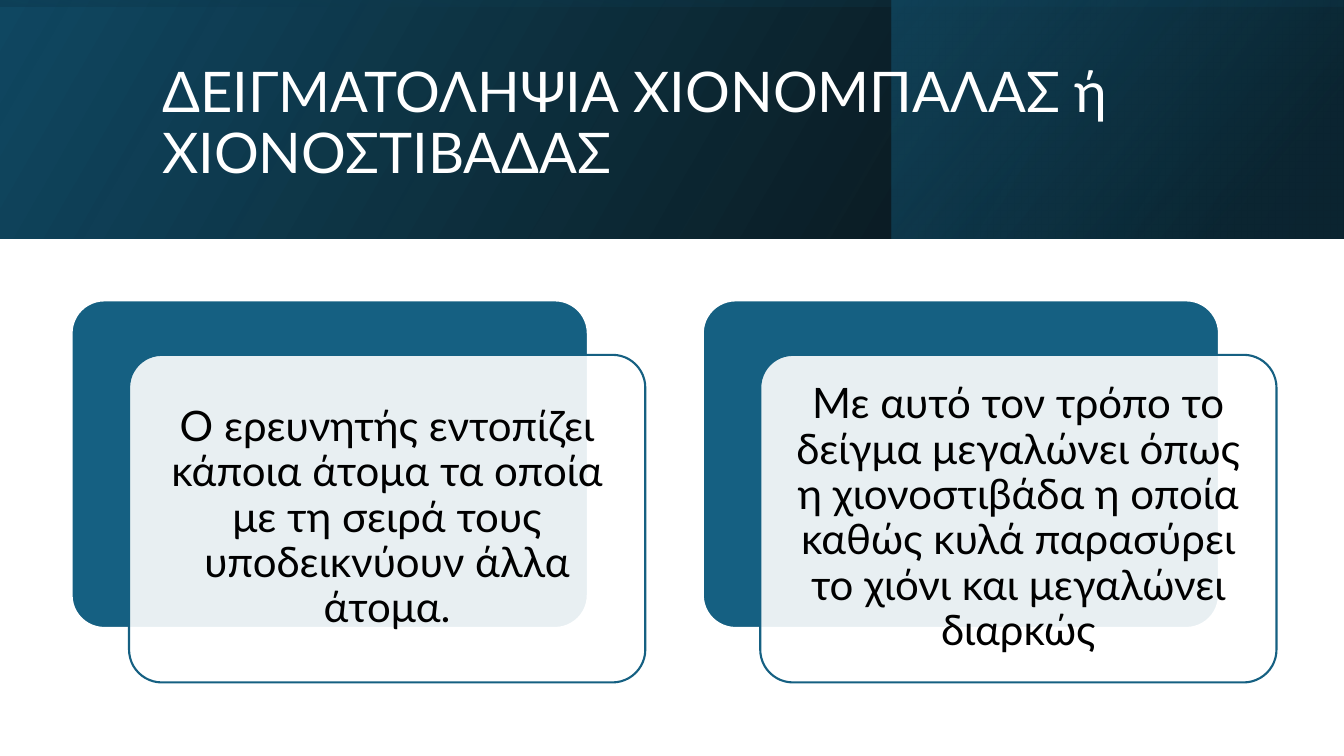
from lxml import etree
from pptx import Presentation, util as u
from pptx.dml.color import RGBColor
from pptx.enum import shapes, text
from pptx.oxml import parse_xml
from pptx.oxml.ns import nsdecls, qn

PX = u.Inches(1) // 100
FONT = "Lato"
COLORS = {"black": "000000", "white": "FFFFFF", "blue": "156082",
          "deep": "104862", "night": "0B3041"}
TITLE = "ΔΕΙΓΜΑΤΟΛΗΨΙΑ ΧΙΟΝΟΜΠΑΛΑΣ ή ΧΙΟΝΟΣΤΙΒΑΔΑΣ"
STEPS = [
    "Ο ερευνητής εντοπίζει κάποια άτομα τα οποία με τη σειρά τους "
    "υποδεικνύουν άλλα άτομα.",
    "Με αυτό τον τρόπο το δείγμα μεγαλώνει όπως η χιονοστιβάδα η οποία "
    "καθώς κυλά παρασύρει το χιόνι και μεγαλώνει διαρκώς",
]


def rgb(name):
    """Return the named colour."""
    return RGBColor.from_string(COLORS[name])


def emu(*lengths):
    """Turn px lengths into EMU."""
    return [length * PX for length in lengths]


def write(frame, wording, size, color, inset_x, inset_y):
    """Fill a text frame with one vertically centred paragraph."""
    frame.word_wrap = True
    frame.vertical_anchor = text.MSO_ANCHOR.MIDDLE
    frame.margin_left = frame.margin_right = inset_x * PX
    frame.margin_top = frame.margin_bottom = inset_y * PX
    paragraph = frame.paragraphs[0]
    paragraph.line_spacing = 0.9
    run = paragraph.add_run()
    run.text = wording
    run.font.name, run.font.size = FONT, u.Pt(size)
    run.font.color.rgb = rgb(color)
    return paragraph


def add_veil(slide, box, stops, angle, rotation=0):
    """Add a mirrored rectangle with a translucent gradient."""
    veil = slide.shapes.add_shape(shapes.MSO_SHAPE.RECTANGLE, *emu(*box))
    veil.shadow.inherit = False
    veil.line.fill.background()
    veil.rotation = rotation
    properties = veil._element.spPr
    properties.find(qn("a:xfrm")).set("flipH", "1")
    marks = "".join(
        f'<a:gs pos="{place * 1000}"><a:srgbClr val="{COLORS[color]}">'
        f'<a:alpha val="{opacity * 1000}"/></a:srgbClr></a:gs>'
        for place, color, opacity in stops)
    properties.find(qn("a:prstGeom")).addnext(parse_xml(
        f'<a:gradFill {nsdecls("a")}><a:gsLst>{marks}</a:gsLst>'
        f'<a:lin ang="{angle * 60000}" scaled="0"/></a:gradFill>'))


def add_banner(slide, left, top, width, height):
    """Add the layered dark banner and its title."""
    add_veil(slide, (left, top, width, height),
             [(0, "black", 96), (100, "deep", 100)], 330)
    add_veil(slide, (left + 884, top, 448, height),
             [(19, "night", 68), (100, "blue", 48)], 320)
    shift = (width - height) // 2
    add_veil(slide, (left + shift, top - shift, height, width),
             [(23, "deep", 16), (99, "black", 45)], 350, 270)
    title = slide.shapes.add_textbox(*emu(left + 151, top + 38, 1063, 172))
    write(title.text_frame, TITLE, 40, "white", 10, 5)


def add_panel(slide, box, fill, outline):
    """Add one rounded panel."""
    panel = slide.shapes.add_shape(
        shapes.MSO_SHAPE.ROUNDED_RECTANGLE, *emu(*box))
    panel.adjustments[0] = 0.1
    panel.shadow.inherit = False
    panel.fill.solid()
    panel.fill.fore_color.rgb = rgb(fill)
    panel.line.color.rgb = rgb(outline)
    panel.line.width = u.Pt(1.5)
    return panel


def add_card(slide, left, top, width, height, wording):
    """Add a blue panel with an offset translucent panel of text."""
    add_panel(slide, (left, top, width, height), "blue", "white")
    front = add_panel(slide, (left + 57, top + 54, width, height),
                      "white", "blue")
    tint = front._element.spPr.find(qn("a:solidFill")).find(qn("a:srgbClr"))
    etree.SubElement(tint, qn("a:alpha")).set("val", "90000")
    paragraph = write(front.text_frame, wording, 30, "black", 12, 12)
    paragraph.alignment = text.PP_ALIGN.CENTER


def main():
    """Build and save the slide."""
    deck = Presentation()
    deck.slide_width, deck.slide_height = emu(1333, 750)
    slide = deck.slides.add_slide(deck.slide_layouts[6])
    add_banner(slide, 0, 0, 1333, 237)
    for index, step in enumerate(STEPS):
        add_card(slide, 71 + 626 * index, 298, 512, 325, step)
    deck.save("out.pptx")


if __name__ == "__main__":
    main()
